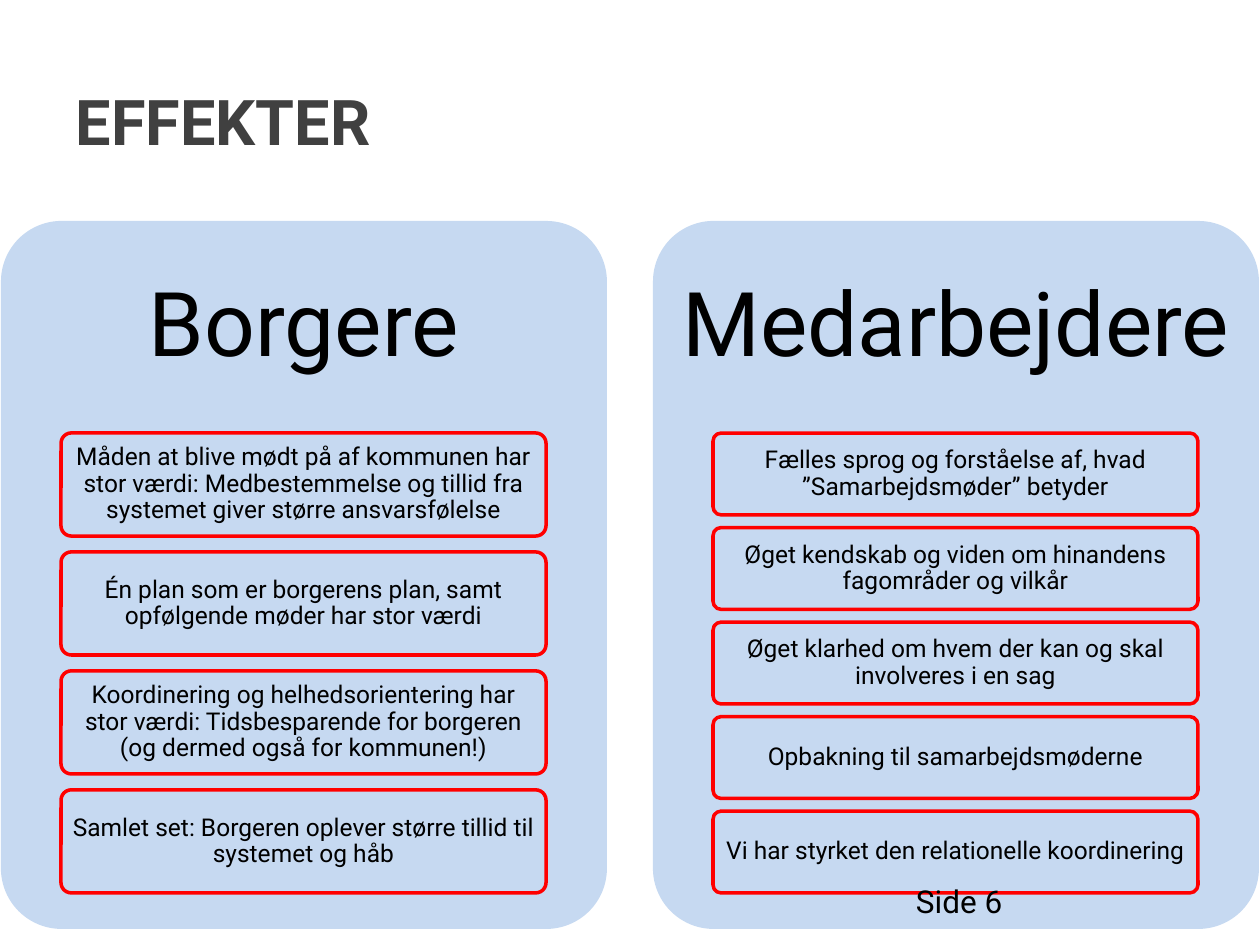
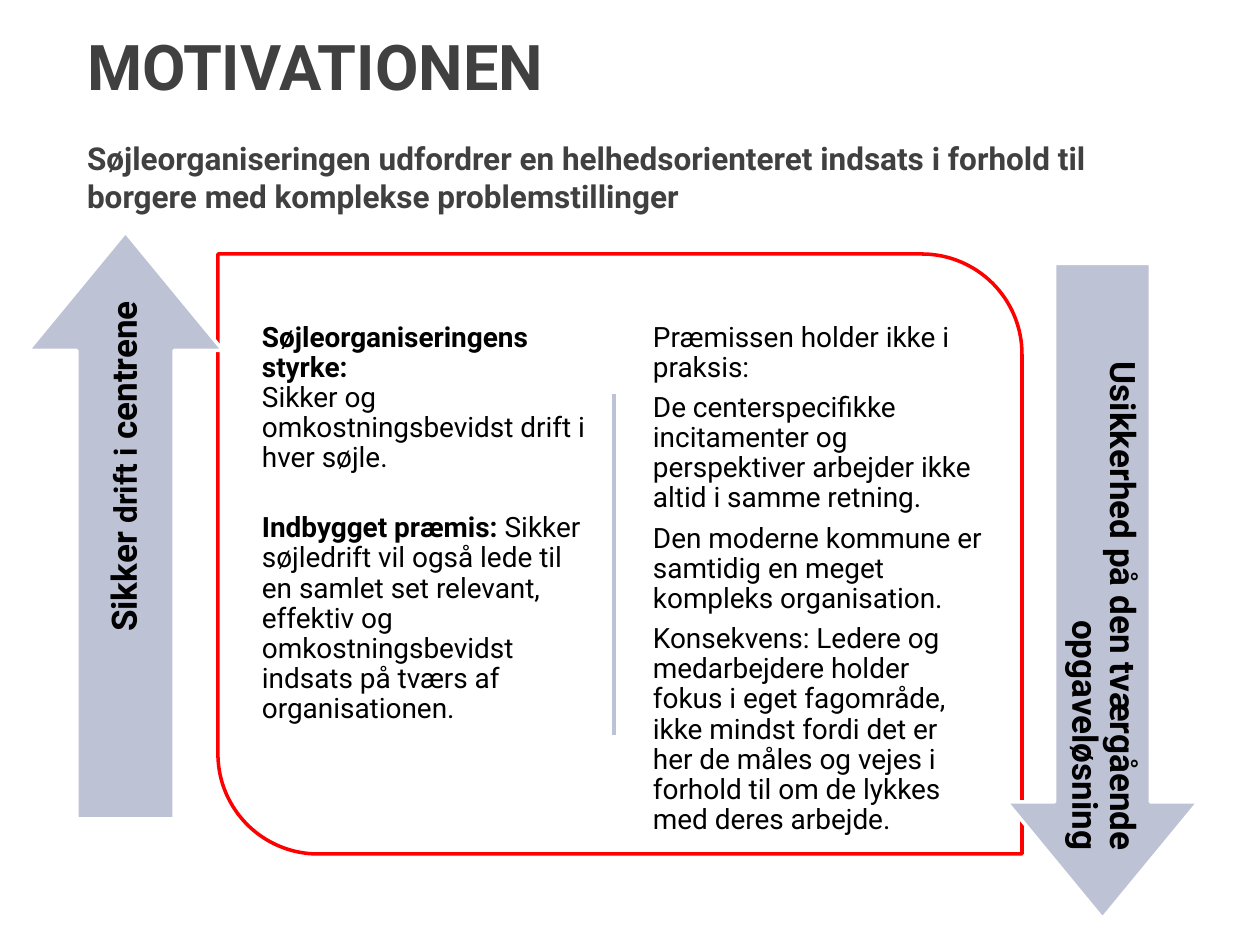
import pptx
import pptx.util
import pptx.dml.color
import pptx.enum.shapes
import pptx.enum.text
import pptx.oxml.ns
from lxml import etree

PX = 914400 / 126
SHAPE = pptx.enum.shapes.MSO_SHAPE
ALIGN = pptx.enum.text.PP_ALIGN
ANCHOR = pptx.enum.text.MSO_ANCHOR


def emu(*lengths):
    return [pptx.util.Emu(round(length * PX)) for length in lengths]


def color(hex_string):
    return pptx.dml.color.RGBColor.from_string(hex_string)


class Deck:
    font = "Roboto"
    ink = "000000"
    heading = "404040"
    red = "FF0000"
    panel_blue = "C6D9F1"
    arrow_grey = "BEC2D5"
    white = "FFFFFF"

    def __init__(self):
        self.presentation = pptx.Presentation()
        self.presentation.slide_width, self.presentation.slide_height = emu(1260, 945)
        self.slide = None

    def add_slide(self):
        layout = self.presentation.slide_layouts.get_by_name("Title Only")
        self.slide = self.presentation.slides.add_slide(layout)

    def frame(self, shape, insets, anchor):
        """Prepare a text frame; insets are left, top, right, bottom."""
        frame = shape.text_frame
        frame.word_wrap = True
        frame.auto_size = pptx.enum.text.MSO_AUTO_SIZE.NONE
        frame.vertical_anchor = anchor
        (frame.margin_left, frame.margin_top,
         frame.margin_right, frame.margin_bottom) = emu(*insets)
        return frame

    def set_text(self, frame, paragraphs, size, ink=ink, bold=False,
                 align=ALIGN.LEFT, line=0.9, after=0):
        """A paragraph is a string or a list of (text, run font settings)."""
        for number, content in enumerate(paragraphs):
            paragraph = frame.paragraphs[0] if number == 0 else frame.add_paragraph()
            paragraph.alignment = align
            paragraph.line_spacing = line
            paragraph.space_before = pptx.util.Pt(0)
            paragraph.space_after = pptx.util.Pt(after)
            paragraph.font.name = self.font
            paragraph.font.size = pptx.util.Pt(size)
            paragraph.font.bold = bold
            paragraph.font.color.rgb = color(ink)
            runs = [(content, {})] if isinstance(content, str) else content
            for text, settings in runs:
                run = paragraph.add_run()
                run.text = text.rstrip("\n")
                if "bold" in settings:
                    run.font.bold = settings["bold"]
                if "size" in settings:
                    run.font.size = pptx.util.Pt(settings["size"])
                if text.endswith("\n"):
                    paragraph.add_line_break()

    def title(self, box, paragraphs, insets=(13, 6, 13, 6)):
        title = self.slide.shapes.title
        title.left, title.top, title.width, title.height = emu(*box)
        frame = self.frame(title, insets, ANCHOR.MIDDLE)
        self.set_text(frame, paragraphs, 36, self.heading, bold=True, line=1.0)
        return frame

    def text(self, box, paragraphs, size, insets, anchor=ANCHOR.TOP, **style):
        frame = self.frame(self.slide.shapes.add_textbox(*emu(*box)), insets, anchor)
        self.set_text(frame, paragraphs, size, **style)
        return frame

    def shape(self, preset, box, adjustments, fill=None, outline=None):
        shape = self.slide.shapes.add_shape(preset, *emu(*box))
        shape.shadow.inherit = False
        for index, value in enumerate(adjustments):
            shape.adjustments[index] = value
        if fill:
            shape.fill.solid()
            shape.fill.fore_color.rgb = color(fill)
        else:
            shape.fill.background()
        if outline:
            shape.line.color.rgb = color(outline)
            shape.line.width = pptx.util.Pt(2)
        else:
            shape.line.fill.background()
        return shape

    def line(self, start, end, stroke):
        connector = self.slide.shapes.add_connector(
            pptx.enum.shapes.MSO_CONNECTOR.STRAIGHT, *emu(*start, *end))
        connector.line.color.rgb = color(stroke)
        connector.line.width = pptx.util.Pt(2)
        etree.SubElement(connector._element.spPr, pptx.oxml.ns.qn("a:effectLst"))

    def effect_column(self, left, heading, effects):
        """Panel with a heading and equal boxes filling a fixed height."""
        top, width = 221, 606
        self.shape(SHAPE.ROUNDED_RECTANGLE, (left, top, width, 708), [0.1], self.panel_blue)
        self.text((left, top, width, 213), [heading], 51, (26,) * 4,
                  ANCHOR.MIDDLE, align=ALIGN.CENTER)
        count, gap_share = len(effects), 2 / 13
        height = 460 / (count + (count - 1) * gap_share)
        for row, effect in enumerate(effects):
            y = 433 + row * height * (1 + gap_share)
            box = self.shape(SHAPE.ROUNDED_RECTANGLE, (left + 60, y, width - 121, height),
                             [0.1], outline=self.red)
            self.set_text(self.frame(box, (5, 4, 5, 4), ANCHOR.MIDDLE), [effect], 14,
                          align=ALIGN.CENTER)

    def arrow(self, box, rotation, label):
        arrow = self.shape(SHAPE.RIGHT_ARROW, box, [0.498, 0.607],
                           self.arrow_grey, self.white)
        arrow.rotation = rotation
        self.set_text(self.frame(arrow, (10,) * 4, ANCHOR.MIDDLE), [label], 20,
                      bold=True, align=ALIGN.RIGHT)


def effects_slide(deck):
    deck.add_slide()
    deck.title((63, 81, 1050, 78), ["EFFEKTER"])
    deck.effect_column(1, "Borgere", [
        "Måden at blive mødt på af kommunen har stor værdi: Medbestemmelse og "
        "tillid fra systemet giver større ansvarsfølelse",
        "Én plan som er borgerens plan, samt opfølgende møder har stor værdi",
        "Koordinering og helhedsorientering har stor værdi: Tidsbesparende for "
        "borgeren (og dermed også for kommunen!)",
        "Samlet set: Borgeren oplever større tillid til systemet og håb",
    ])
    deck.effect_column(653, "Medarbejdere", [
        "Fælles sprog og forståelse af, hvad ”Samarbejdsmøder” betyder",
        "Øget kendskab og viden om hinandens fagområder og vilkår",
        "Øget klarhed om hvem der kan og skal involveres i en sag",
        "Opbakning til samarbejdsmøderne",
        "Vi har styrket den relationelle koordinering",
    ])
    # Page number
    deck.text((903, 876, 294, 50), ["Side 6"], 18, (13, 6, 13, 6), line=1.0)


def motivation_slide(deck):
    deck.add_slide()
    # Title with its subtitle
    heading = deck.title((74, 55, 1045, 169), [
        "MOTIVATIONEN",
        "Søjleorganiseringen udfordrer en helhedsorienteret indsats i forhold til "
        "borgere med komplekse problemstillinger",
    ], insets=(13, 6, 13, 43))
    subtitle = heading.paragraphs[1]
    subtitle.font.size = pptx.util.Pt(18)
    subtitle.space_before = pptx.util.Pt(21)

    # Frame and divider
    deck.shape(SHAPE.ROUND_2_DIAG_RECTANGLE, (218, 254, 804, 600), [0, 0.167],
               outline=deck.red)
    deck.line((614, 394), (614, 735), deck.arrow_grey)

    # Strength and premise, against what happens in practice
    bold = {"bold": True}
    strength = deck.text((253, 314, 348, 367), [
        [("Søjleorganiseringens styrke:\n", bold),
         ("Sikker og omkostningsbevidst drift i hver søjle.", {})],
        [("Indbygget præmis: ", bold),
         ("Sikker søjledrift vil også lede til en samlet set relevant, effektiv og "
          "omkostningsbevidst indsats på tværs af organisationen.", {})],
    ], 16, (9,) * 4, after=5.6)
    strength.paragraphs[1].space_before = pptx.util.Pt(17)
    deck.text((644, 314, 348, 367), [
        "Præmissen holder ikke i praksis:",
        "De centerspecifikke incitamenter og perspektiver arbejder ikke altid i "
        "samme retning.",
        "Den moderne kommune er samtidig en meget kompleks organisation.",
        "Konsekvens: Ledere og medarbejdere holder fokus i eget fagområde, ikke "
        "mindst fordi det er her de måles og vejes i forhold til om de lykkes med "
        "deres arbejde.",
    ], 16, (9,) * 4, after=5.6)

    # Side arrows
    deck.arrow((-168, 428, 587, 195), 270, [
        ("Sikker ", {}), ("drift i ", {"size": 18}), ("centrene", {})])
    deck.arrow((775, 495, 655, 192), 90, "Usikkerhed på den tværgående opgaveløsning")


def main():
    deck = Deck()
    effects_slide(deck)
    motivation_slide(deck)
    deck.presentation.save("out.pptx")


if __name__ == "__main__":
    main()
